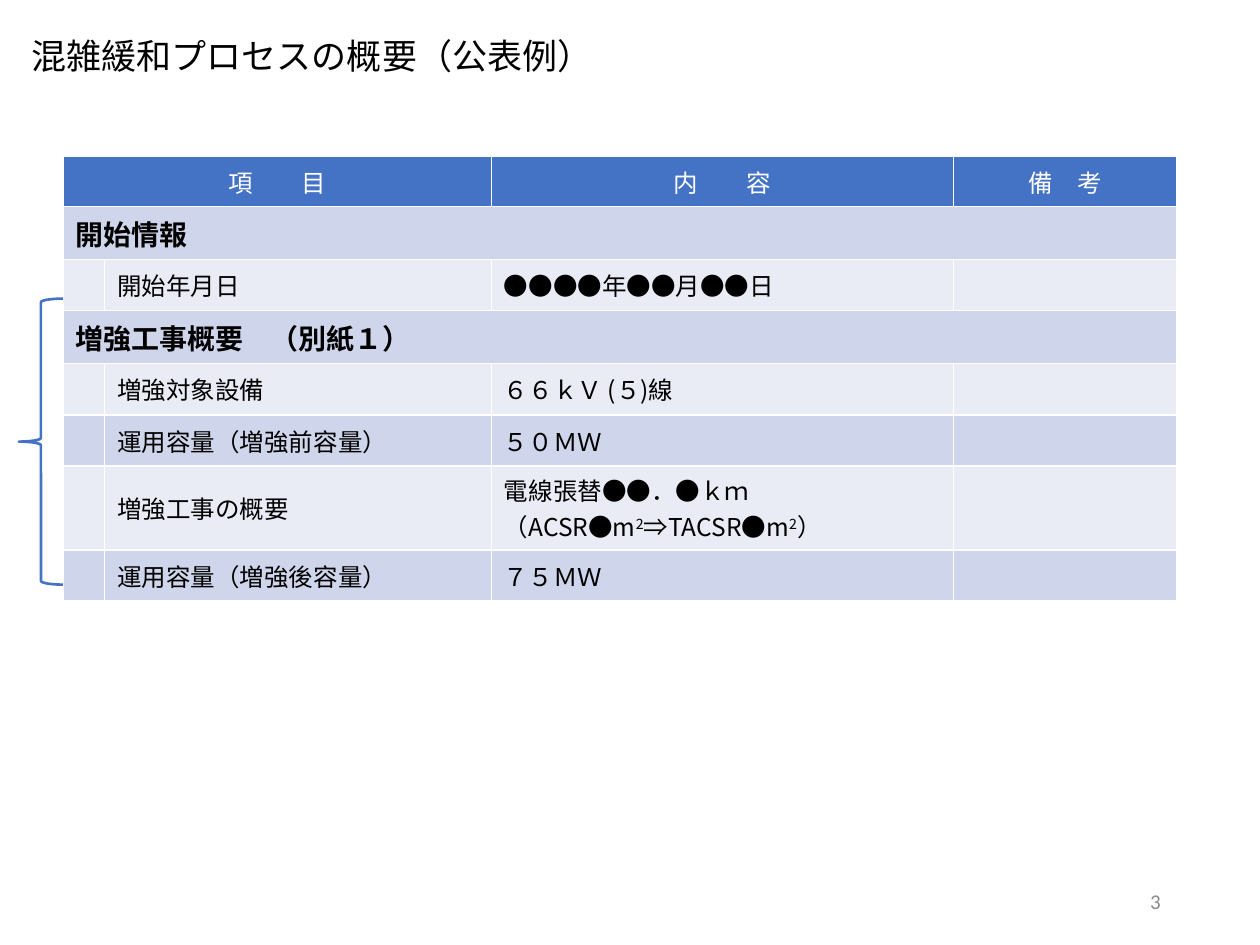
import pptx
import pptx.util
import pptx.dml.color
import pptx.enum.shapes
import pptx.enum.text
from lxml import etree

Inches, Pt = pptx.util.Inches, pptx.util.Pt
RGBColor = pptx.dml.color.RGBColor
ALIGN, ANCHOR = pptx.enum.text.PP_ALIGN, pptx.enum.text.MSO_ANCHOR

BLUE = RGBColor(0x44, 0x72, 0xC4)
DARK = RGBColor(0xCF, 0xD5, 0xEA)
LIGHT = RGBColor(0xE9, 0xEB, 0xF5)
WHITE = RGBColor(0xFF, 0xFF, 0xFF)
BLACK = RGBColor(0, 0, 0)
GRAY = RGBColor(0x8C, 0x8C, 0x8C)
SANS, LATIN = "Noto Sans CJK JP", "Calibri"

COLS = [0.33, 3.07, 3.67, 1.77]
ROW = 0.4
HEAD = ["項\u3000\u3000目", "", "内\u3000\u3000容", "備\u3000考"]
# One string is a section heading; a pair is an item and its content
ROWS = [
    "開始情報",
    ("開始年月日", "●●●●年●●月●●日"),
    "増強工事概要\u3000（別紙１）",
    ("増強対象設備", "６６ｋＶ (５)線"),
    ("運用容量（増強前容量）", "５０ＭＷ"),
    ("増強工事の概要", "電線張替●●．●ｋｍ\n（ACSR●m^2^⇒TACSR●m^2^）"),
    ("運用容量（増強後容量）", "７５ＭＷ"),
]


def style(run, size, color, name=SANS, bold=False):
    font = run.font
    font.size, font.bold, font.name = Pt(size), bold, name
    font.color.rgb = color
    east = etree.SubElement(font._element, pptx.oxml.ns.qn("a:ea"))
    east.set("typeface", SANS)


def write(frame, text, size, color, name=SANS, bold=False, align=ALIGN.LEFT):
    """Fill a text frame; text between ^ marks is raised."""
    for i, line in enumerate(text.split("\n")):
        para = frame.paragraphs[0] if i == 0 else frame.add_paragraph()
        para.alignment = align
        for j, part in enumerate(line.split("^")):
            run = para.add_run()
            run.text = part
            style(run, size, color, name, bold)
            if j % 2:
                run.font._element.set("baseline", "30000")


def add_title(slide, left, top, width, height):
    title = slide.shapes.title
    title.left, title.top, title.width, title.height = left, top, width, height
    frame = title.text_frame
    frame.vertical_anchor = ANCHOR.BOTTOM
    write(frame, "混雑緩和プロセスの概要（公表例）", 20, BLACK)
    frame.paragraphs[0].line_spacing = 0.9


def add_grid(slide, left, top, width, height):
    grid = slide.shapes.add_table(
        len(ROWS) + 1, len(COLS), left, top, width, height).table
    for col, size in zip(grid.columns, COLS):
        col.width = Inches(size)
    for i, row in enumerate(grid.rows):
        row.height = Inches(ROW)
        for cell in row.cells:
            cell.vertical_anchor = ANCHOR.MIDDLE
            cell.fill.solid()
            cell.fill.fore_color.rgb = (
                BLUE if i == 0 else DARK if i % 2 else LIGHT)

    # Header
    grid.cell(0, 0).merge(grid.cell(0, 1))
    for j, text in enumerate(HEAD):
        if text:
            write(grid.cell(0, j).text_frame, text, 14, WHITE, LATIN,
                  align=ALIGN.CENTER)

    # Sections and items
    for i, entry in enumerate(ROWS, 1):
        if isinstance(entry, str):
            grid.cell(i, 0).merge(grid.cell(i, len(COLS) - 1))
            write(grid.cell(i, 0).text_frame, entry, 16, BLACK, bold=True)
        else:
            for j, text in enumerate(entry, 1):
                write(grid.cell(i, j).text_frame, text, 14, BLACK)


def add_number(slide, left, top, width, height):
    frame = slide.shapes.add_textbox(left, top, width, height).text_frame
    frame.word_wrap = True
    frame.vertical_anchor = ANCHOR.MIDDLE
    write(frame, "3", 12, GRAY, LATIN, align=ALIGN.RIGHT)


def add_brace(slide, left, top, width, height):
    brace = slide.shapes.add_shape(
        pptx.enum.shapes.MSO_SHAPE.LEFT_BRACE, left, top, width, height)
    brace.shadow.inherit = False
    brace.fill.background()
    brace.line.color.rgb = BLUE
    brace.line.width = Pt(1.5)


def main():
    deck = pptx.Presentation()
    deck.slide_width, deck.slide_height = Inches(10), Inches(7.5)
    slide = deck.slides.add_slide(deck.slide_layouts[5])
    add_grid(slide, Inches(0.5), Inches(1.24),
             Inches(sum(COLS)), Inches(ROW * (len(ROWS) + 1)))
    add_title(slide, Inches(0.15), Inches(0.19), Inches(9), Inches(0.47))
    add_number(slide, Inches(7.06), Inches(6.95), Inches(2.25), Inches(0.4))
    add_brace(slide, Inches(0.15), Inches(2.37), Inches(0.35), Inches(2.27))
    deck.save("out.pptx")


if __name__ == "__main__":
    main()
